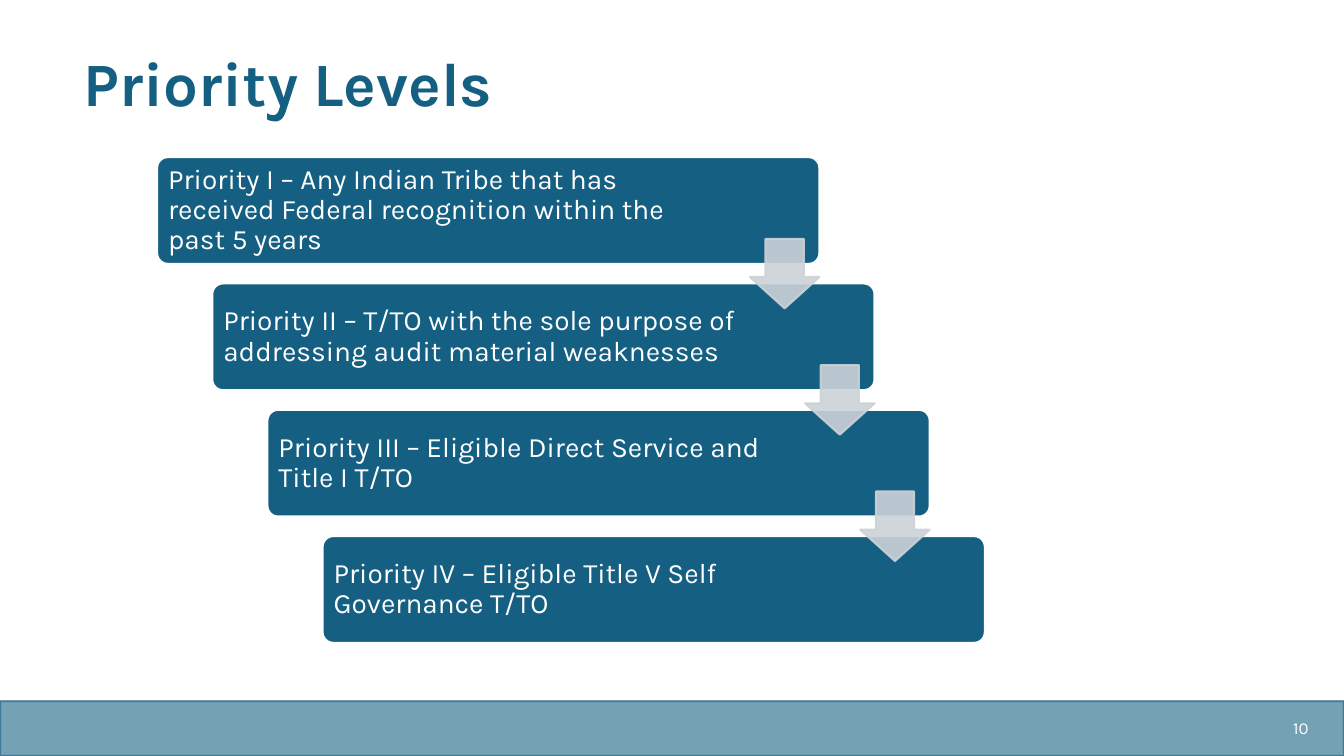
from lxml import etree
from pptx import Presentation
from pptx.dml.color import RGBColor
from pptx.enum.shapes import MSO_SHAPE
from pptx.enum.text import MSO_ANCHOR, PP_ALIGN
from pptx.oxml.ns import qn
from pptx.util import Cm, Pt

BLUE = RGBColor(0x15, 0x60, 0x82)
GREY = RGBColor(0xCC, 0xD2, 0xD8)
WHITE = RGBColor(0xFF, 0xFF, 0xFF)
FONT = "Karla"

SLIDE_WIDTH, SLIDE_HEIGHT = Cm(33.87), Cm(19.05)
PRIORITIES = [
    "Priority I – Any Indian Tribe that has received Federal recognition within the past 5 years",
    "Priority II – T/TO with the sole purpose of addressing audit material weaknesses",
    "Priority III – Eligible Direct Service and Title I T/TO",
    "Priority IV – Eligible Title V Self Governance T/TO",
]


def format_paragraph(paragraph, size, color, align=PP_ALIGN.LEFT, bold=False):
    paragraph.alignment = align
    paragraph.font.name = FONT
    paragraph.font.size = Pt(size)
    paragraph.font.bold = bold
    paragraph.font.color.rgb = color


def add_filled_shape(slide, kind, left, top, width, height, fill, line, opacity=100):
    shape = slide.shapes.add_shape(kind, left, top, width, height)
    shape.shadow.inherit = False
    shape.fill.solid()
    shape.fill.fore_color.rgb = fill
    shape.line.color.rgb = line
    shape.line.width = Pt(1.5)
    if opacity < 100:
        for color in shape._element.spPr.iter(qn("a:srgbClr")):
            etree.SubElement(color, qn("a:alpha"), val=str(opacity * 1000))
    return shape


def add_footer(slide, left, top, width, height):
    # Translucent band
    add_filled_shape(slide, MSO_SHAPE.RECTANGLE, left, top, width, height, BLUE, BLUE, 59)

    # Slide number at the right
    number_width = Cm(3.63)
    number = slide.shapes.add_textbox(
        left + width - number_width - Cm(0.64), top + Cm(0.15), number_width, Cm(1.02))
    frame = number.text_frame
    frame.word_wrap = True
    frame.vertical_anchor = MSO_ANCHOR.MIDDLE
    frame.text = "10"
    format_paragraph(frame.paragraphs[0], 12, WHITE, PP_ALIGN.RIGHT)


def add_title(slide, left, top, width, height):
    title = slide.shapes.title
    title.left, title.top, title.width, title.height = left, top, width, height
    frame = title.text_frame
    frame.vertical_anchor = MSO_ANCHOR.TOP
    frame.text = "Priority Levels"
    paragraph = frame.paragraphs[0]
    paragraph.line_spacing = 0.9
    format_paragraph(paragraph, 44, BLUE, bold=True)


def add_priority(slide, text, left, top, width, height):
    box = add_filled_shape(
        slide, MSO_SHAPE.ROUNDED_RECTANGLE, left, top, width, height, BLUE, WHITE)
    box.adjustments[0] = 0.1
    frame = box.text_frame
    frame.word_wrap = True
    frame.vertical_anchor = MSO_ANCHOR.MIDDLE
    frame.margin_left = frame.margin_top = frame.margin_bottom = Cm(0.2)
    frame.margin_right = Cm(3.3)  # keeps the text clear of the arrows
    frame.text = text
    paragraph = frame.paragraphs[0]
    paragraph.line_spacing = 0.9
    format_paragraph(paragraph, 20, WHITE)


def add_staircase(slide, left, top, width, height):
    box_width, box_height, arrow_size = Cm(16.69), Cm(2.69), Cm(1.75)
    steps = len(PRIORITIES) - 1
    step_x = (width - box_width) // steps
    step_y = (height - box_height) // steps

    # Boxes, each one step right and down
    for index, text in enumerate(PRIORITIES):
        add_priority(slide, text, left + index * step_x, top + index * step_y,
                     box_width, box_height)

    # Arrows from each box to the next
    for index in range(steps):
        arrow = add_filled_shape(
            slide, MSO_SHAPE.DOWN_ARROW,
            left + index * step_x + box_width - arrow_size,
            top + index * step_y + Cm(2.06),
            arrow_size, arrow_size, GREY, GREY, 90)
        arrow.adjustments[0] = 0.55
        arrow.adjustments[1] = 0.45


def main():
    presentation = Presentation()
    presentation.slide_width = SLIDE_WIDTH
    presentation.slide_height = SLIDE_HEIGHT
    slide = presentation.slides.add_slide(presentation.slide_layouts[5])

    footer_height = Cm(1.38)
    add_footer(slide, 0, SLIDE_HEIGHT - footer_height, SLIDE_WIDTH, footer_height)
    add_title(slide, Cm(1.85), Cm(1.22), Cm(26.82), Cm(1.98))
    add_staircase(slide, Cm(3.96), Cm(3.96), Cm(20.86), Cm(12.24))

    presentation.save("out.pptx")


if __name__ == "__main__":
    main()
